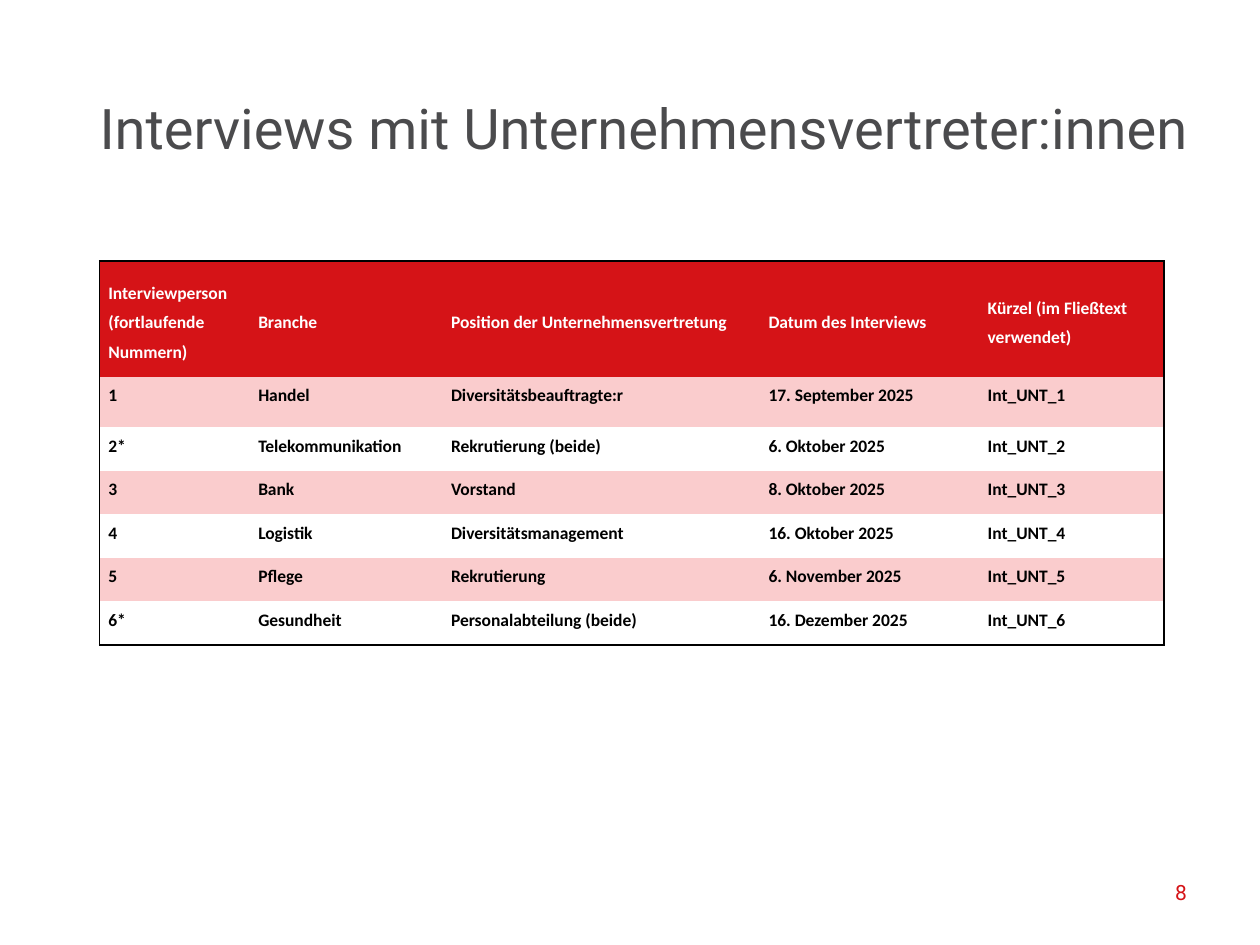
from dataclasses import dataclass

from lxml import etree
from pptx import Presentation
from pptx import util as u
from pptx.dml.color import RGBColor
from pptx.enum import text
from pptx.oxml import ns


@dataclass(frozen=True)
class Theme:
    red: str = "D51317"
    pink: str = "FACCCD"
    white: str = "FFFFFF"
    black: str = "000000"
    grey: str = "4B4B4D"
    head_font: str = "Roboto"
    body_font: str = "Calibri"
    title_size: int = 32
    number_size: int = 12
    table_size: int = 10


LEFT = 0.79
HEADER = ["Interviewperson (fortlaufende Nummern)", "Branche",
          "Position der Unternehmensvertretung", "Datum des Interviews",
          "Kürzel (im Fließtext verwendet)"]
INTERVIEWS = [
    ("1", "Handel", "Diversitätsbeauftragte:r", "17. September 2025"),
    ("2*", "Telekommunikation", "Rekrutierung (beide)", "6. Oktober 2025"),
    ("3", "Bank", "Vorstand", "8. Oktober 2025"),
    ("4", "Logistik", "Diversitätsmanagement", "16. Oktober 2025"),
    ("5", "Pflege", "Rekrutierung", "6. November 2025"),
    ("6*", "Gesundheit", "Personalabteilung (beide)", "16. Dezember 2025"),
]
COLUMNS = [1.19, 1.53, 2.52, 1.74, 1.47]
TABLE_HEIGHT, HEADER_HEIGHT, FIRST_HEIGHT = 3.05, 0.92, 0.4


def apply(target, values):
    for name, value in values.items():
        setattr(target, name, value)


class SlideBuilder:
    def __init__(self, prs, theme):
        self.theme = theme
        self.slide = prs.slides.add_slide(prs.slide_layouts[5])

    def add_text(self, tf, content, font, size, color, bold=False, **paragraph):
        p = tf.paragraphs[0]
        apply(p, paragraph)
        r = p.add_run()
        r.text = content
        apply(r.font, {"name": font, "size": u.Pt(size), "bold": bold})
        r.font.color.rgb = RGBColor.from_string(color)

    def frame(self, sp, box, anchor):
        apply(sp, dict(zip(("left", "top", "width", "height"), map(u.Inches, box))))
        tf = sp.text_frame
        apply(tf, {"margin_left": 0, "margin_right": 0, "margin_top": 0,
                   "margin_bottom": 0, "word_wrap": True,
                   "auto_size": text.MSO_AUTO_SIZE.NONE, "vertical_anchor": anchor})
        return tf

    def title(self, content, box):
        tf = self.frame(self.slide.shapes.title, box, text.MSO_ANCHOR.TOP)
        self.add_text(tf, content, self.theme.head_font, self.theme.title_size,
                      self.theme.grey, alignment=text.PP_ALIGN.LEFT)

    def page_number(self, content, box):
        sp = self.slide.shapes.add_textbox(0, 0, 0, 0)
        tf = self.frame(sp, box, text.MSO_ANCHOR.BOTTOM)
        self.add_text(tf, content, self.theme.head_font, self.theme.number_size,
                      self.theme.red, alignment=text.PP_ALIGN.RIGHT, line_spacing=0.9)

    def borders(self, cell, outer):
        """Draw the sides named in outer and hide the others."""
        tc_pr = cell._tc.get_or_add_tcPr()
        for i, side in enumerate("LRTB"):
            ln = etree.Element(ns.qn(f"a:ln{side}"), w=str(u.Pt(1)))
            if side in outer:
                fill = etree.SubElement(ln, ns.qn("a:solidFill"))
                etree.SubElement(fill, ns.qn("a:srgbClr"), val=self.theme.black)
            else:
                etree.SubElement(ln, ns.qn("a:noFill"))
            tc_pr.insert(i, ln)

    def table(self, rows, left, top, widths, heights):
        t = self.theme
        last_row, last_col = len(rows) - 1, len(widths) - 1
        table = self.slide.shapes.add_table(
            len(rows), len(widths), u.Inches(left), u.Inches(top),
            u.Inches(sum(widths)), u.Inches(sum(heights))).table
        apply(table, {"first_row": False, "horz_banding": False})
        for column, width in zip(table.columns, widths):
            column.width = u.Inches(width)
        for i, (row, height) in enumerate(zip(rows, heights)):
            table.rows[i].height = u.Inches(height)
            fill = t.red if i == 0 else t.pink if i % 2 else t.white
            anchor = text.MSO_ANCHOR.TOP if i else text.MSO_ANCHOR.MIDDLE
            for j, content in enumerate(row):
                cell = table.cell(i, j)
                apply(cell, {"margin_left": u.Inches(0.07), "margin_right": u.Inches(0.07),
                             "margin_top": 0, "margin_bottom": 0,
                             "vertical_anchor": anchor})
                cell.fill.solid()
                cell.fill.fore_color.rgb = RGBColor.from_string(fill)
                edges = {"L": j == 0, "R": j == last_col, "T": i == 0, "B": i == last_row}
                self.borders(cell, [side for side, on in edges.items() if on])
                self.add_text(cell.text_frame, content, t.body_font, t.table_size,
                              t.black if i else t.white, bold=True,
                              line_spacing=1.4, space_after=u.Pt(8))


def main():
    prs = Presentation()
    apply(prs, {"slide_width": u.Inches(10), "slide_height": u.Inches(7.5)})
    s = SlideBuilder(prs, Theme())
    s.page_number("8", (8.04, 6.98, 1.38, 0.2))
    s.title("Interviews mit Unternehmensvertreter:innen", (LEFT, 0.74, 8.82, 0.74))
    rows = [HEADER] + [(*row, f"Int_UNT_{n}") for n, row in enumerate(INTERVIEWS, 1)]
    others = len(INTERVIEWS) - 1
    body_height = (TABLE_HEIGHT - HEADER_HEIGHT - FIRST_HEIGHT) / others
    s.table(rows, LEFT, 2.07, COLUMNS,
            [HEADER_HEIGHT, FIRST_HEIGHT] + [body_height] * others)
    prs.save("out.pptx")


if __name__ == "__main__":
    main()
